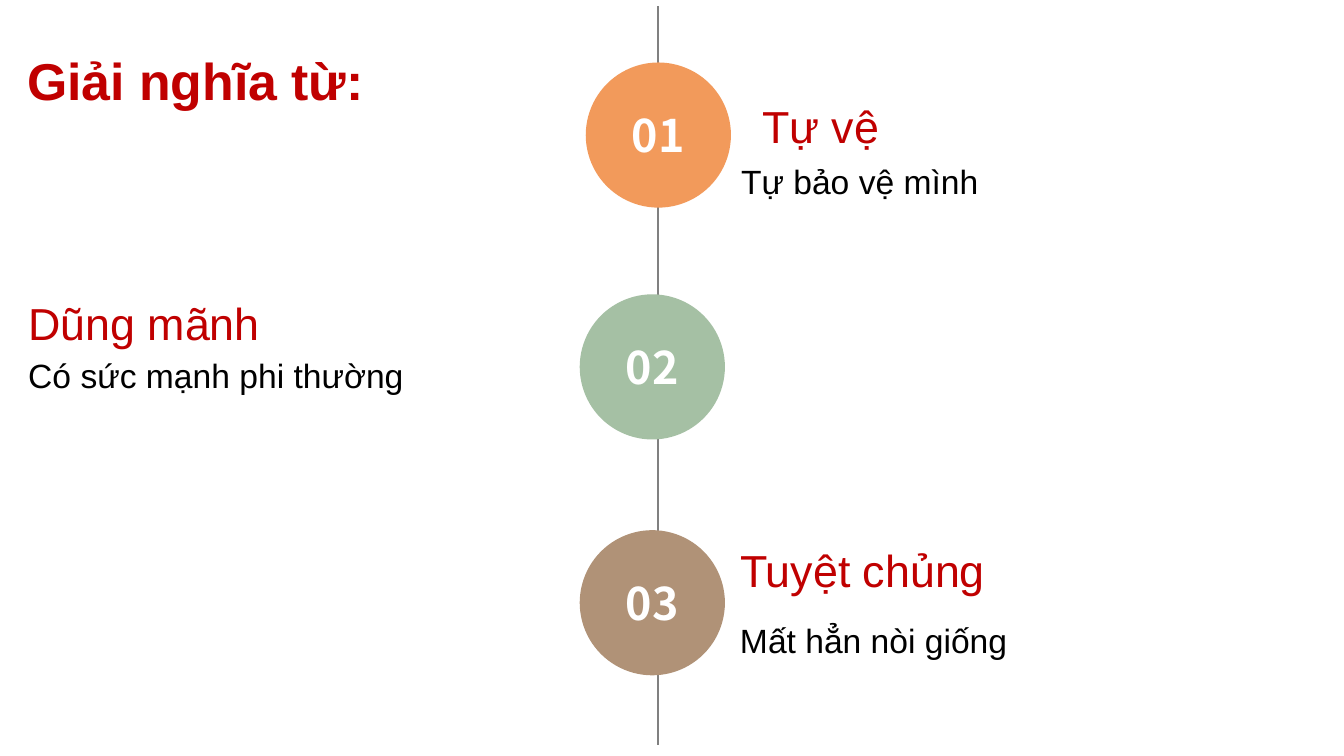
from lxml import etree
from pptx import Presentation
from pptx.dml.color import RGBColor
from pptx.enum.shapes import MSO_CONNECTOR, MSO_SHAPE
from pptx.enum.text import MSO_ANCHOR, MSO_AUTO_SIZE, PP_ALIGN
from pptx.oxml.ns import qn
from pptx.util import Inches, Pt

RED = RGBColor(0xC0, 0x00, 0x00)
BLACK = RGBColor(0x00, 0x00, 0x00)
WHITE = RGBColor(0xFF, 0xFF, 0xFF)
GRAY = RGBColor(0x80, 0x80, 0x80)
ORANGE = RGBColor(0xF2, 0x9A, 0x5B)
GREEN = RGBColor(0xA5, 0xC0, 0xA4)
BROWN = RGBColor(0xB0, 0x92, 0x77)

# Number, circle colour, circle left and top,
# then text, left, top and width of the word and of its meaning
ENTRIES = [
    ("01", ORANGE, (5.81, 0.62),
     ("Tự vệ", 7.4, 0.9, 3.3), ("Tự bảo vệ mình", 7.19, 1.52, 6.1)),
    ("02", GREEN, (5.75, 2.92),
     ("Dũng mãnh", 0.12, 2.85, 3.19),
     ("Có sức mạnh phi thường", 0.12, 3.44, 5.62)),
    ("03", BROWN, (5.75, 5.26),
     ("Tuyệt chủng", 7.18, 5.3, 4.19),
     ("Mất hẳn nòi giống", 7.18, 6.07, 6.1)),
]


def fill_text(shape, text, size, color, align=PP_ALIGN.LEFT,
              name="Arial", bold=False, inset=(0.16, 0.08)):
    frame = shape.text_frame
    frame.word_wrap = True
    frame.margin_left = frame.margin_right = Inches(inset[0])
    frame.margin_top = frame.margin_bottom = Inches(inset[1])
    frame.text = text
    para = frame.paragraphs[0]
    para.alignment = align
    para.font.name = name
    para.font.size = Pt(size)
    para.font.bold = bold
    para.font.color.rgb = color
    return frame


def add_title(slide, text):
    box = slide.shapes.add_textbox(Inches(0), Inches(0.13),
                                   Inches(3.88), Inches(1.32))
    frame = fill_text(box, text, 37, RED, PP_ALIGN.CENTER,
                      bold=True, inset=(0.13, 0.07))
    frame.vertical_anchor = MSO_ANCHOR.MIDDLE


def add_label(slide, label, height, size, color):
    text, left, top, width = label
    box = slide.shapes.add_textbox(Inches(left), Inches(top),
                                   Inches(width), Inches(height))
    frame = fill_text(box, text, size, color)
    frame.auto_size = MSO_AUTO_SIZE.SHAPE_TO_FIT_TEXT


def add_axis(slide):
    line = slide.shapes.add_connector(
        MSO_CONNECTOR.STRAIGHT, Inches(6.53), Inches(0.06),
        Inches(6.53), Inches(7.39))
    line.line.color.rgb = GRAY
    line.line.width = Pt(1.5)
    etree.SubElement(line._element.spPr, qn("a:effectLst"))


def add_circle(slide, number, color, spot):
    left, top = spot
    circle = slide.shapes.add_shape(
        MSO_SHAPE.OVAL, Inches(left), Inches(top),
        Inches(1.44), Inches(1.44))
    circle.shadow.inherit = False
    circle.fill.solid()
    circle.fill.fore_color.rgb = color
    circle.line.fill.background()
    frame = fill_text(circle, number, 32, WHITE, PP_ALIGN.CENTER,
                      "Noto Sans CJK SC", True)
    frame.vertical_anchor = MSO_ANCHOR.MIDDLE


def main():
    deck = Presentation()
    deck.slide_width = Inches(13.33)
    deck.slide_height = Inches(7.5)
    slide = deck.slides.add_slide(deck.slide_layouts[6])
    add_title(slide, "Giải nghĩa từ:")
    add_axis(slide)
    for number, color, spot, word, meaning in ENTRIES:
        add_circle(slide, number, color, spot)
        add_label(slide, word, 0.7, 32, RED)
        add_label(slide, meaning, 0.57, 24, BLACK)
    deck.save("out.pptx")


if __name__ == "__main__":
    main()
